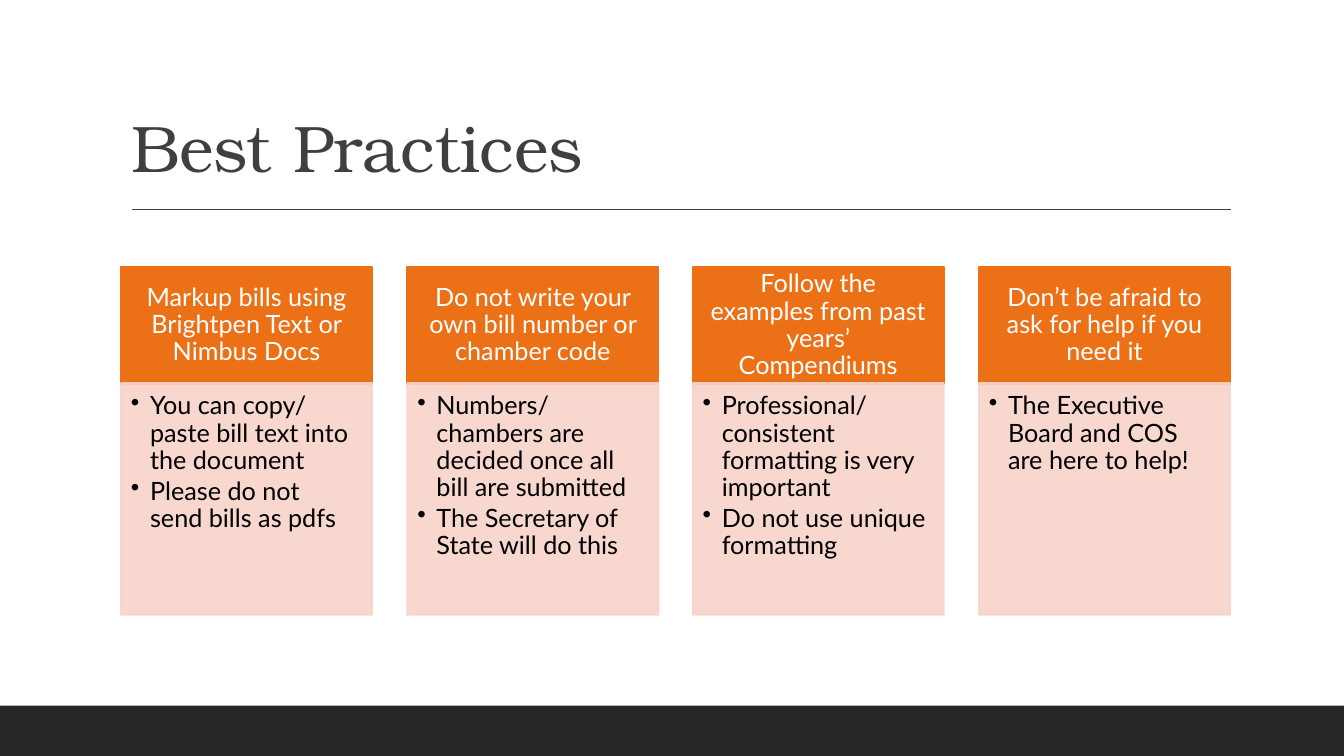
"""Build the Best Practices slide with four advice cards."""
from dataclasses import dataclass

from lxml import etree
from pptx import Presentation
from pptx import util as u
from pptx.dml.color import RGBColor
from pptx.enum import shapes, text
from pptx.oxml.ns import qn

PX = 9144
CHARCOAL = RGBColor(0x26, 0x26, 0x26)
GREY = RGBColor(0x3F, 0x3F, 0x3F)
ORANGE = RGBColor(0xEC, 0x70, 0x16)
PINK = RGBColor(0xF8, 0xD3, 0xC9)
WHITE = RGBColor(0xFF, 0xFF, 0xFF)
BLACK = RGBColor(0, 0, 0)
TITLE_FONT, BODY_FONT = "TeX Gyre Bonum", "Lato"

CARDS_LEFT, CARDS_RIGHT, CARD_WIDTH = 120, 1220, 249
HEADING_TOP, HEADING_HEIGHT = 265, 116
ADVICE_TOP, ADVICE_HEIGHT = 380, 230
BULLET_INDENT = 19


@dataclass(frozen=True)
class Card:
    heading: str
    advice: tuple[str, ...]


CARDS = (
    Card("Markup bills using Brightpen Text or Nimbus Docs",
         ("You can copy/ paste bill text into the document",
          "Please do not send bills as pdfs")),
    Card("Do not write your own bill number or chamber code",
         ("Numbers/ chambers are decided once all bill are submitted",
          "The Secretary of State will do this")),
    Card("Follow the examples from past years’ Compendiums",
         ("Professional/ consistent formatting is very important",
          "Do not use unique formatting")),
    Card("Don’t be afraid to ask for help if you need it",
         ("The Executive Board and COS are here to help!",)),
)


def px(length: int) -> u.Emu:
    return u.Emu(length * PX)


def set_margins(frame, left: int, top: int, right: int, bottom: int) -> None:
    frame.margin_left, frame.margin_top = px(left), px(top)
    frame.margin_right, frame.margin_bottom = px(right), px(bottom)


def style_paragraph(paragraph, font_name: str, size: int, color: RGBColor) -> None:
    paragraph.line_spacing = 0.9
    paragraph.font.name = font_name
    paragraph.font.size = u.Pt(size)
    paragraph.font.color.rgb = color


def add_bullet(paragraph) -> None:
    properties = paragraph._p.get_or_add_pPr()
    properties.set("marL", str(px(BULLET_INDENT)))
    properties.set("indent", str(-px(BULLET_INDENT)))
    bullet_color = etree.SubElement(properties, qn("a:buClr"))
    etree.SubElement(bullet_color, qn("a:srgbClr"), val=str(BLACK))
    etree.SubElement(properties, qn("a:buChar"), char="•")


def add_panel(slide, left: int, top: int, width: int, height: int,
              color: RGBColor, opacity: int = 100):
    panel = slide.shapes.add_shape(shapes.MSO_SHAPE.RECTANGLE,
                                   px(left), px(top), px(width), px(height))
    panel.shadow.inherit = False
    panel.fill.solid()
    panel.fill.fore_color.rgb = color
    panel.line.color.rgb = color
    panel.line.width = u.Pt(1.25)
    if opacity < 100:
        for tint in panel._element.spPr.iter(qn("a:srgbClr")):
            etree.SubElement(tint, qn("a:alpha"), val=str(opacity * 1000))
    panel.text_frame.word_wrap = True
    return panel


def add_card(slide, card: Card, left: int) -> None:
    heading = add_panel(slide, left, HEADING_TOP, CARD_WIDTH, HEADING_HEIGHT,
                        ORANGE).text_frame
    set_margins(heading, 14, 8, 14, 8)
    heading.vertical_anchor = text.MSO_ANCHOR.MIDDLE
    heading.text = card.heading
    heading.paragraphs[0].alignment = text.PP_ALIGN.CENTER
    style_paragraph(heading.paragraphs[0], BODY_FONT, 18, WHITE)

    advice = add_panel(slide, left, ADVICE_TOP, CARD_WIDTH, ADVICE_HEIGHT,
                       PINK, opacity=89).text_frame
    set_margins(advice, 10, 10, 14, 16)
    advice.vertical_anchor = text.MSO_ANCHOR.TOP
    advice.text = "\n".join(card.advice)
    for position, paragraph in enumerate(advice.paragraphs):
        paragraph.level = 1
        add_bullet(paragraph)
        paragraph.alignment = text.PP_ALIGN.LEFT
        if position:
            paragraph.space_before = u.Pt(2.7)
        style_paragraph(paragraph, BODY_FONT, 18, BLACK)


def add_title(slide, wording: str) -> None:
    title = slide.shapes.title
    title.left, title.top, title.width, title.height = map(px, (120, 31, 1100, 159))
    frame = title.text_frame
    frame.text = wording
    frame.word_wrap = True
    frame.auto_size = text.MSO_AUTO_SIZE.NONE
    frame.vertical_anchor = text.MSO_ANCHOR.BOTTOM
    set_margins(frame, 10, 5, 10, 5)
    frame.paragraphs[0].alignment = text.PP_ALIGN.LEFT
    style_paragraph(frame.paragraphs[0], TITLE_FONT, 47, GREY)

    rule = slide.shapes.add_connector(shapes.MSO_CONNECTOR.STRAIGHT,
                                      px(131), px(208), px(1221), px(208))
    rule.line.color.rgb = GREY
    rule.line.width = u.Pt(1)
    etree.SubElement(rule._element.spPr, qn("a:effectLst"))


def main() -> None:
    deck = Presentation()
    deck.slide_width, deck.slide_height = px(1333), px(750)
    slide = deck.slides.add_slide(deck.slide_layouts[5])
    slide.background.fill.solid()
    slide.background.fill.fore_color.rgb = WHITE

    footer_band = add_panel(slide, 0, 700, 1333, 50, CHARCOAL)
    footer_band.line.fill.background()
    add_title(slide, "Best Practices")
    travel = CARDS_RIGHT - CARDS_LEFT - CARD_WIDTH
    for column, card in enumerate(CARDS):
        add_card(slide, card, CARDS_LEFT + round(travel * column / (len(CARDS) - 1)))
    deck.save("out.pptx")


if __name__ == "__main__":
    main()
